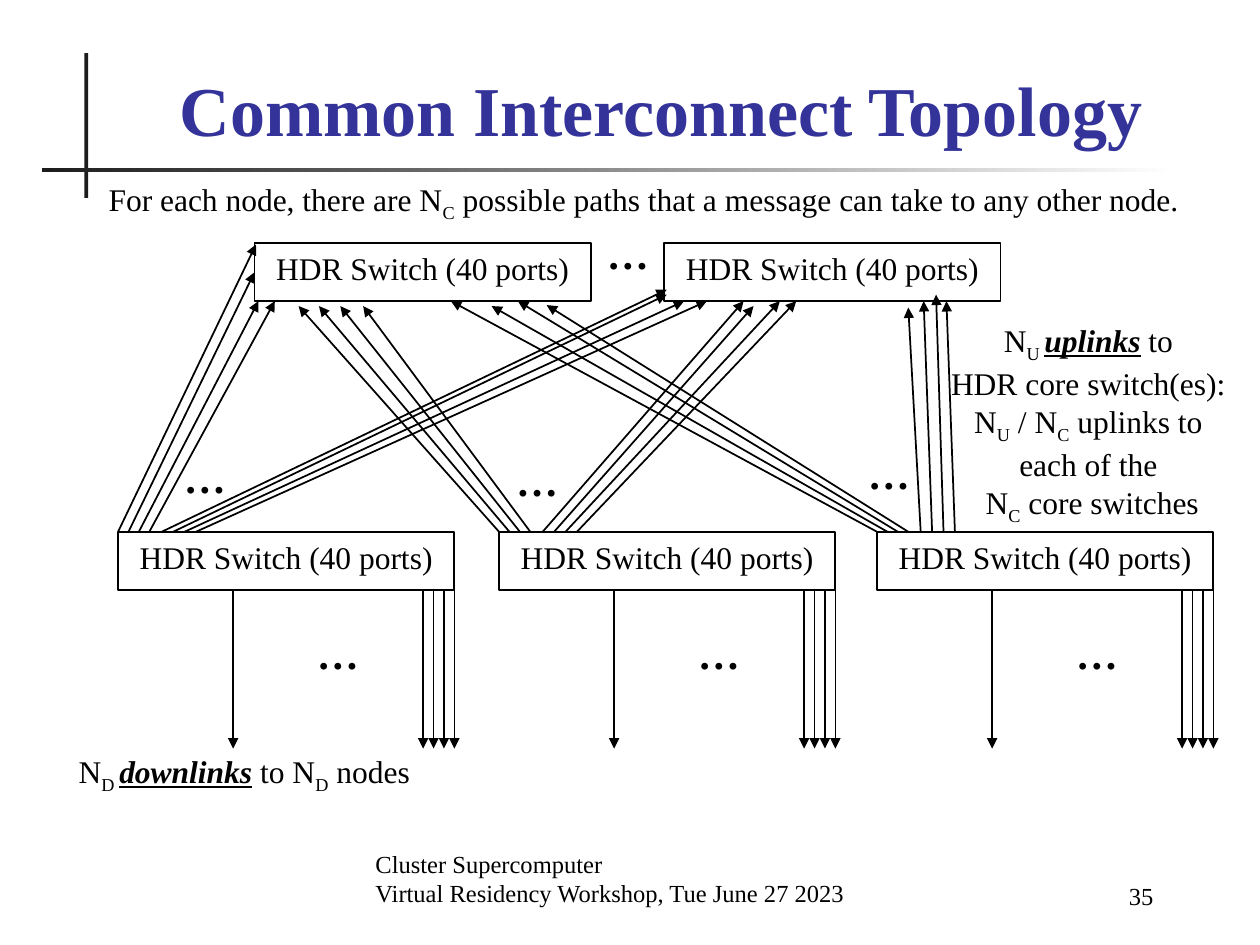
from lxml import etree
from pptx import Presentation
from pptx.dml.color import RGBColor
from pptx.enum.shapes import MSO_CONNECTOR, MSO_SHAPE
from pptx.enum.text import MSO_ANCHOR, PP_ALIGN
from pptx.oxml.ns import qn
from pptx.util import Cm, Pt

FONT = "Times New Roman"
BLACK, DARK, WHITE, BLUE = "000000", "1C1C1C", "FFFFFF", "333399"

# All lengths are in centimetres
SWITCH_WIDTH, SWITCH_HEIGHT = 6.78, 1.17
CORE_TOP, LEAF_TOP = 4.9, 10.72
CORE_LEFTS = [5.13, 13.39]

# Each leaf switch: left edge, place of its uplink dots, arrow tips at the core switches
LEAVES = [
    (2.38, (3.28, 8.97),
     [(5.16, 4.93), (5.13, 5.49), (5.21, 6.07), (5.54, 6.07),
      (13.44, 5.84), (13.44, 5.94), (13.79, 6.07), (14.25, 6.07)]),
    (10.06, (9.98, 9.04),
     [(6.02, 6.17), (6.43, 6.17), (6.86, 6.17), (7.32, 6.17),
      (14.99, 6.07), (15.19, 6.17), (15.72, 6.07), (16.05, 6.07)]),
    (17.68, (17.07, 8.89),
     [(9.09, 6.07), (9.91, 6.17), (10.44, 6.07), (11.02, 6.15),
      (18.31, 6.2), (18.62, 6.07), (18.87, 5.94), (19.08, 6.07)]),
]
UPLINK_OFFSETS = [0.21 * i for i in range(4)] + [0.88 + 0.23 * i for i in range(4)]
DOWNLINK_OFFSETS = [2.32] + [SWITCH_WIDTH - 0.21 * i for i in range(4)]
DOWNLINK_LENGTH = 3.2


def color(value):
    return RGBColor.from_string(value)


def write(frame, paragraphs, size=18, align=PP_ALIGN.CENTER, anchor=MSO_ANCHOR.TOP,
          ink=BLACK, bold=False):
    """Fill a text frame; each paragraph is a list of (text, style) runs."""
    frame.word_wrap = True
    frame.vertical_anchor = anchor
    for index, runs in enumerate(paragraphs):
        paragraph = frame.paragraphs[0] if index == 0 else frame.add_paragraph()
        paragraph.alignment = align
        font = paragraph.font
        font.name, font.size, font.bold = FONT, Pt(size), bold
        font.color.rgb = color(ink)
        for text, style in runs:
            run = paragraph.add_run()
            run.text = text
            if style == "sub":
                run._r.get_or_add_rPr().set("baseline", "-25000")
            elif style == "key":
                run.font.bold = run.font.italic = run.font.underline = True


def add_text(slide, box, paragraphs, **options):
    shape = slide.shapes.add_textbox(*map(Cm, box))
    write(shape.text_frame, paragraphs, **options)


def add_dots(slide, left, top):
    add_text(slide, (left, top, 1.7, 1.47), [[("…", "")]], size=24, bold=True)


def add_box(slide, box):
    shape = slide.shapes.add_shape(MSO_SHAPE.RECTANGLE, *map(Cm, box))
    shape.shadow.inherit = False
    return shape


def add_arrow(slide, start, end, width):
    connector = slide.shapes.add_connector(
        MSO_CONNECTOR.STRAIGHT, *map(Cm, (*start, *end)))
    connector.line.color.rgb = color(BLACK)
    connector.line.width = Pt(width)
    etree.SubElement(connector.line._get_or_add_ln(), qn("a:tailEnd"), type="triangle")
    etree.SubElement(connector._element.spPr, qn("a:effectLst"))


def add_switch(slide, left, top):
    shape = add_box(slide, (left, top, SWITCH_WIDTH, SWITCH_HEIGHT))
    shape.fill.background()
    shape.line.color.rgb = color(BLACK)
    shape.line.width = Pt(1)
    write(shape.text_frame, [[("HDR Switch (40 ports)", "")]])


def add_leaf(slide, left, top, dots, tips):
    """A leaf switch with its uplinks and downlinks."""
    add_switch(slide, left, top)
    for offset, tip in zip(UPLINK_OFFSETS, tips):
        add_arrow(slide, (left + offset, top), tip, 1)
    add_dots(slide, *dots)

    bottom = top + SWITCH_HEIGHT
    for offset in DOWNLINK_OFFSETS:
        x = left + offset
        add_arrow(slide, (x, bottom), (x, bottom + DOWNLINK_LENGTH), 0.75)
    add_dots(slide, left + 3.58, top + 1.8)


def add_heading(slide, left, top):
    """Crossed rules and the title."""
    upright = add_box(slide, (left + 0.86, top, 0.08, 2.92))
    upright.fill.solid()
    upright.fill.fore_color.rgb = color(DARK)
    level = add_box(slide, (left, top + 2.31, 22.86, 0.08))
    level.fill.gradient()
    level.fill.gradient_angle = 0
    for stop, value in zip(level.fill.gradient_stops, (DARK, WHITE)):
        stop.color.rgb = color(value)
    for rule in (upright, level):
        rule.line.fill.background()
    add_text(slide, (left + 1.04, top + 0.2, 22.89, 1.88),
             [[("Common Interconnect Topology", "")]],
             size=40, anchor=MSO_ANCHOR.BOTTOM, ink=BLUE, bold=True)


def add_notes_on_links(slide):
    """Sentences around the diagram."""
    add_text(slide, (0.28, 3.51, 25.4, 1.02), [
        [("For each node, there are N", ""), ("C", "sub"),
         (" possible paths that a message can take to any other node.", "")]])
    add_text(slide, (18.92, 6.35, 6.2, 4.11), [
        [("N", ""), ("U ", "sub"), ("uplinks", "key"), (" to ", "")],
        [("HDR core switch(es): ", "")],
        [("N", ""), ("U", "sub"), (" / N", ""), ("C", "sub"), (" uplinks to ", "")],
        [("each of the ", "")],
        [("N", ""), ("C", "sub"), (" core switches", "")]])
    add_text(slide, (0.2, 15.04, 9.45, 1.02), [
        [("N", ""), ("D ", "sub"), ("downlinks", "key"), (" to N", ""),
         ("D", "sub"), (" nodes", "")]])


def add_footer(slide, left, top):
    add_text(slide, (left, top, 11.1, 1.27),
             [[("Cluster Supercomputer", "")],
              [("Virtual Residency Workshop, Tue June 27 2023", "")]],
             size=14, align=PP_ALIGN.LEFT, anchor=MSO_ANCHOR.BOTTOM)
    add_text(slide, (left + 12.57, top + 0.05, 3.61, 1.27), [[("35", "")]],
             size=14, align=PP_ALIGN.RIGHT, anchor=MSO_ANCHOR.BOTTOM)


def main():
    presentation = Presentation()
    presentation.slide_width, presentation.slide_height = Cm(25.4), Cm(19.05)
    slide = presentation.slides.add_slide(presentation.slide_layouts[6])

    add_heading(slide, 0.84, 1.07)
    for left, dots, tips in LEAVES:
        add_leaf(slide, left, LEAF_TOP, dots, tips)
    for left in CORE_LEFTS:
        add_switch(slide, left, CORE_TOP)
    add_dots(slide, 11.81, 4.47)
    add_notes_on_links(slide)
    add_footer(slide, 7.32, 17.15)

    presentation.save("out.pptx")


if __name__ == "__main__":
    main()
